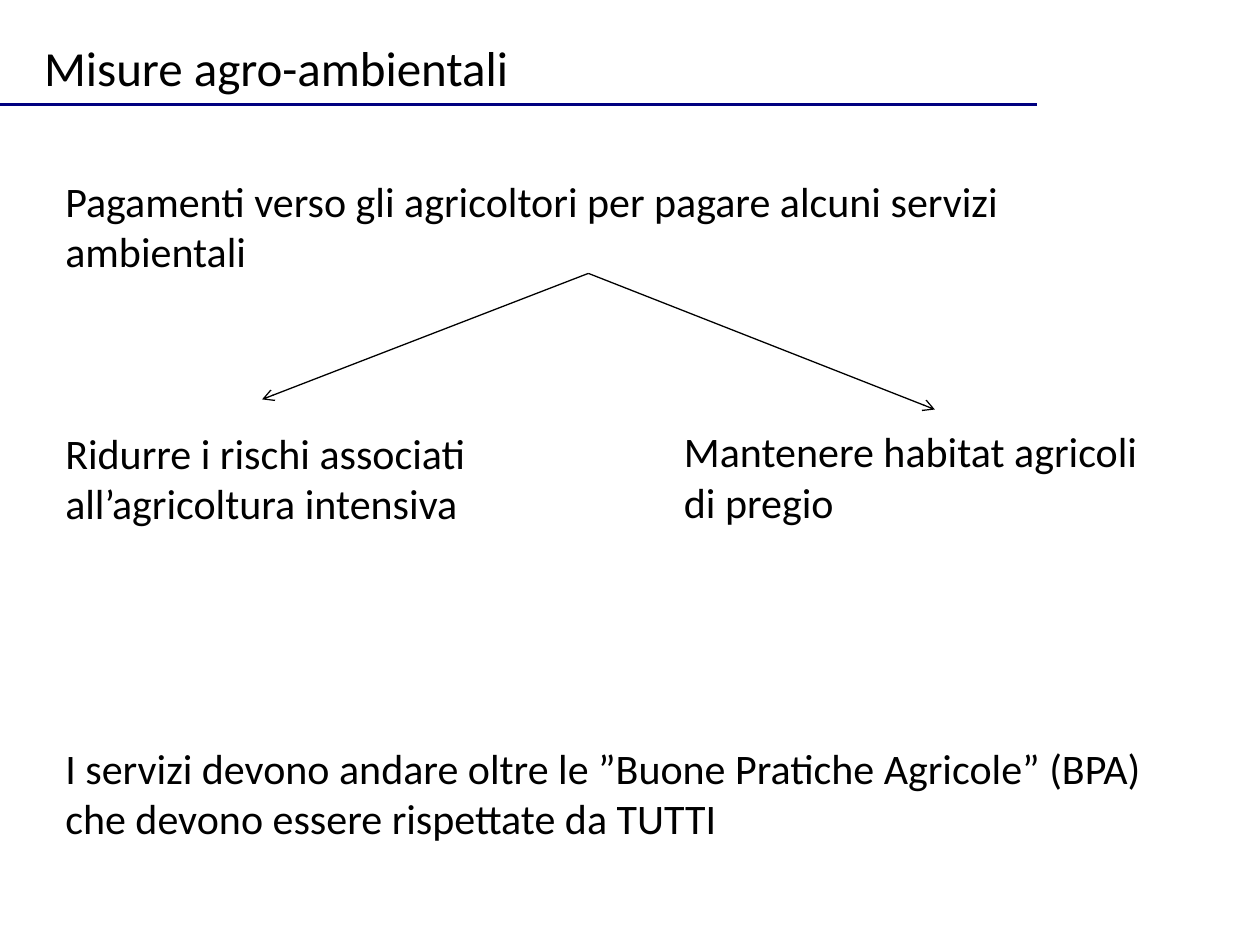
"""Build the slide on agri-environmental measures."""
from lxml.etree import SubElement
from pptx import Presentation
from pptx.dml.color import RGBColor
from pptx.enum.shapes import MSO_CONNECTOR
from pptx.enum.text import MSO_ANCHOR, MSO_AUTO_SIZE, PP_ALIGN
from pptx.oxml.ns import qn
from pptx.util import Inches, Pt

BLACK = RGBColor(0, 0, 0)
NAVY = RGBColor(0, 0, 128)

TITLE = ("Misure agro-ambientali", (0.25, 0.25, 6.08, 0.57))
LEFT, WIDE, HALF, HIGH = 0.42, 8.75, 4, 0.91
NOTES = [
    ("Pagamenti verso gli agricoltori per pagare alcuni servizi ambientali",
     (LEFT, 1.34, WIDE, HIGH)),
    ("Ridurre i rischi associati all’agricoltura intensiva",
     (LEFT, 3.34, HALF, HIGH)),
    ("Mantenere habitat agricoli di pregio",
     (5.33, 3.33, HALF, HIGH)),
    ("I servizi devono andare oltre le ”Buone Pratiche Agricole” (BPA) "
     "che devono essere rispettate da TUTTI",
     (LEFT, 5.84, WIDE, HIGH)),
]
RULE = ((0, 0.83), (8.23, 0.83))
FORK = (4.67, 2.17)
TIPS = [(2.08, 3.17), (7.42, 3.25)]

FRAME = {"word_wrap": True, "auto_size": MSO_AUTO_SIZE.NONE,
         "vertical_anchor": MSO_ANCHOR.TOP}
FONT = {"name": "Calibri", "bold": False}


def apply(item, style):
    for key, value in style.items():
        setattr(item, key, value)


def write(shape, text, box, size):
    places = zip(("left", "top", "width", "height"), map(Inches, box))
    apply(shape, dict(places))
    frame = shape.text_frame
    apply(frame, FRAME)
    frame.text = text
    para = frame.paragraphs[0]
    para.alignment = PP_ALIGN.LEFT
    font = para.runs[0].font
    apply(font, {**FONT, "size": Pt(size)})
    font.color.rgb = BLACK


def draw(slide, start, end, color, width, arrow=False):
    line = slide.shapes.add_connector(
        MSO_CONNECTOR.STRAIGHT, *map(Inches, start + end))
    line.line.color.rgb = color
    line.line.width = Pt(width)
    if arrow:
        SubElement(line.line._get_or_add_ln(), qn("a:tailEnd"), type="arrow")
    SubElement(line._element.spPr, qn("a:effectLst"))


def main():
    deck = Presentation()
    apply(deck, {"slide_width": Inches(10), "slide_height": Inches(7.5)})
    slide = deck.slides.add_slide(deck.slide_layouts[5])
    draw(slide, *RULE, NAVY, 2)
    write(slide.shapes.title, *TITLE, 28)
    for text, box in NOTES:
        write(slide.shapes.add_textbox(0, 0, 0, 0), text, box, 24)
    for tip in TIPS:
        draw(slide, FORK, tip, BLACK, 0.75, arrow=True)
    deck.save("out.pptx")


if __name__ == "__main__":
    main()
